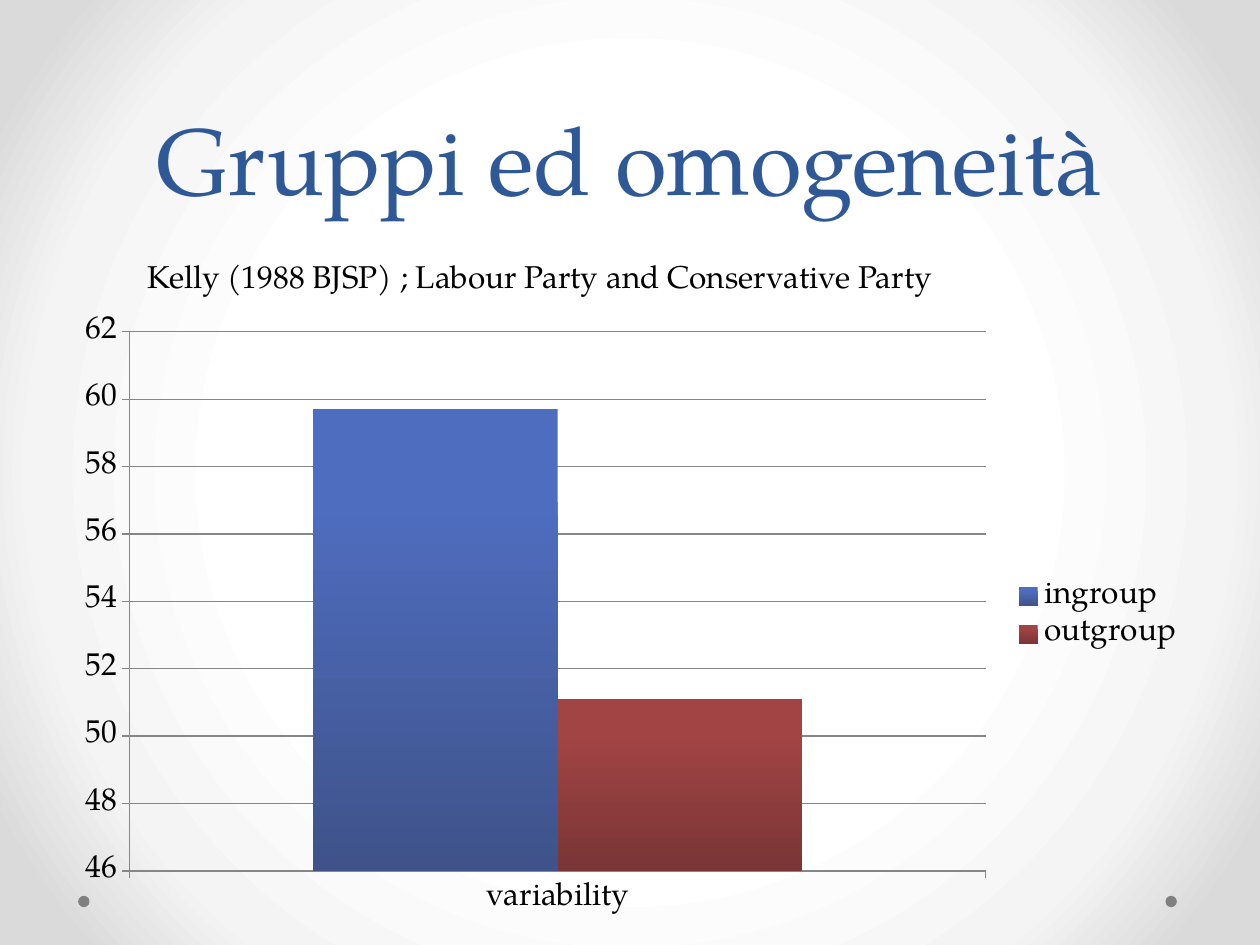
from lxml import etree
from pptx import Presentation, util as u
from pptx.chart.data import CategoryChartData
from pptx.dml.color import RGBColor
from pptx.enum import chart as ch, shapes, text
from pptx.oxml.ns import qn

FONT = "TeX Gyre Pagella"
WIDTH, HEIGHT = u.Inches(10), u.Inches(7.5)
MARGIN = u.Inches(0.5)


def write(frame, words, size, color, align=text.PP_ALIGN.LEFT, leading=None):
    """Put one formatted paragraph into a text frame."""
    line = frame.paragraphs[0]
    line.alignment = align
    line.line_spacing = leading
    run = line.add_run()
    run.text = words
    run.font.name, run.font.size = FONT, u.Pt(size)
    run.font.color.rgb = RGBColor.from_string(color)


def set_gradient(gradient, stops, radial=False):
    """Give a gradFill element its stops and a radial or downward course."""
    for child in list(gradient):
        gradient.remove(child)
    stop_list = etree.SubElement(gradient, qn("a:gsLst"))
    for percent, color in stops:
        stop = etree.SubElement(stop_list, qn("a:gs"), pos=str(percent * 1000))
        etree.SubElement(stop, qn("a:srgbClr"), val=color)
    if radial:
        course = etree.SubElement(gradient, qn("a:path"), path="circle")
        etree.SubElement(course, qn("a:fillToRect"),
                         {side: "50000" for side in "ltrb"})
    else:
        etree.SubElement(gradient, qn("a:lin"), ang="5400000", scaled="0")


deck = Presentation()
deck.slide_width, deck.slide_height = WIDTH, HEIGHT
slide = deck.slides.add_slide(deck.slide_layouts[5])

slide.background.fill.gradient()
set_gradient(next(slide.element.iter(qn("a:gradFill"))),
             [(50, "FFFFFF"), (76, "F4F4F4"), (92, "DADADA")], radial=True)

# Corner dots
DOT = u.Inches(0.09)
for left in (9.25, 0.62):
    dot = slide.shapes.add_shape(shapes.MSO_SHAPE.OVAL, u.Inches(left),
                                 u.Inches(7.11), DOT, DOT)
    dot.shadow.inherit = False
    dot.fill.solid()
    dot.fill.fore_color.rgb = RGBColor.from_string("808080")
    dot.line.fill.background()

# Heading
heading = slide.shapes.title
heading.left, heading.top = MARGIN, 0
heading.width, heading.height = WIDTH - 2 * MARGIN, u.Inches(1.75)
heading.text_frame.vertical_anchor = text.MSO_ANCHOR.BOTTOM
write(heading.text_frame, "Gruppi ed omogeneità", 54, "2F5897",
      align=text.PP_ALIGN.CENTER, leading=u.Pt(58))

# Variability of the two groups
variability = CategoryChartData()
variability.categories = ["variability"]
variability.add_series("ingroup", [59.7])
variability.add_series("outgroup", [51.1])
chart = slide.shapes.add_chart(
    ch.XL_CHART_TYPE.COLUMN_CLUSTERED, MARGIN, u.Inches(2.41),
    WIDTH - 2 * MARGIN, u.Inches(4.95), variability).chart
chart.has_title = False
chart.font.name, chart.font.size = FONT, u.Pt(18)
chart.font.color.rgb = RGBColor.from_string("000000")
chart.has_legend = True
chart.legend.position = ch.XL_LEGEND_POSITION.RIGHT
chart.legend.include_in_layout = False

columns = chart.plots[0]
columns.gap_width, columns.overlap = 150, 0
columns.vary_by_categories = False
for series in columns.series:
    series.format.fill.gradient()
shades = [("4F6DBF", "3F538A"), ("A24444", "7A3536")]
for gradient, (upper, lower) in zip(chart.element.iter(qn("a:gradFill")), shades):
    set_gradient(gradient, [(0, upper), (20, upper), (100, lower)])

scale = chart.value_axis
scale.minimum_scale, scale.maximum_scale, scale.major_unit = 46, 62, 2
scale.tick_labels.number_format = "0"
scale.tick_labels.number_format_is_linked = False
scale.has_major_gridlines = True
for axis in (scale, chart.category_axis):
    axis.major_tick_mark = ch.XL_TICK_MARK.OUTSIDE
for line_format in (scale.format, chart.category_axis.format,
                    scale.major_gridlines.format):
    line_format.line.color.rgb = RGBColor.from_string("868686")
    line_format.line.width = u.Pt(0.75)

# Study reference
study = slide.shapes.add_textbox(u.Inches(1.07), u.Inches(1.99),
                                 u.Inches(6.45), u.Inches(0.4)).text_frame
study.word_wrap = False
study.auto_size = text.MSO_AUTO_SIZE.SHAPE_TO_FIT_TEXT
write(study, "Kelly (1988 BJSP) ; Labour Party and Conservative Party", 18, "000000")

deck.save("out.pptx")
